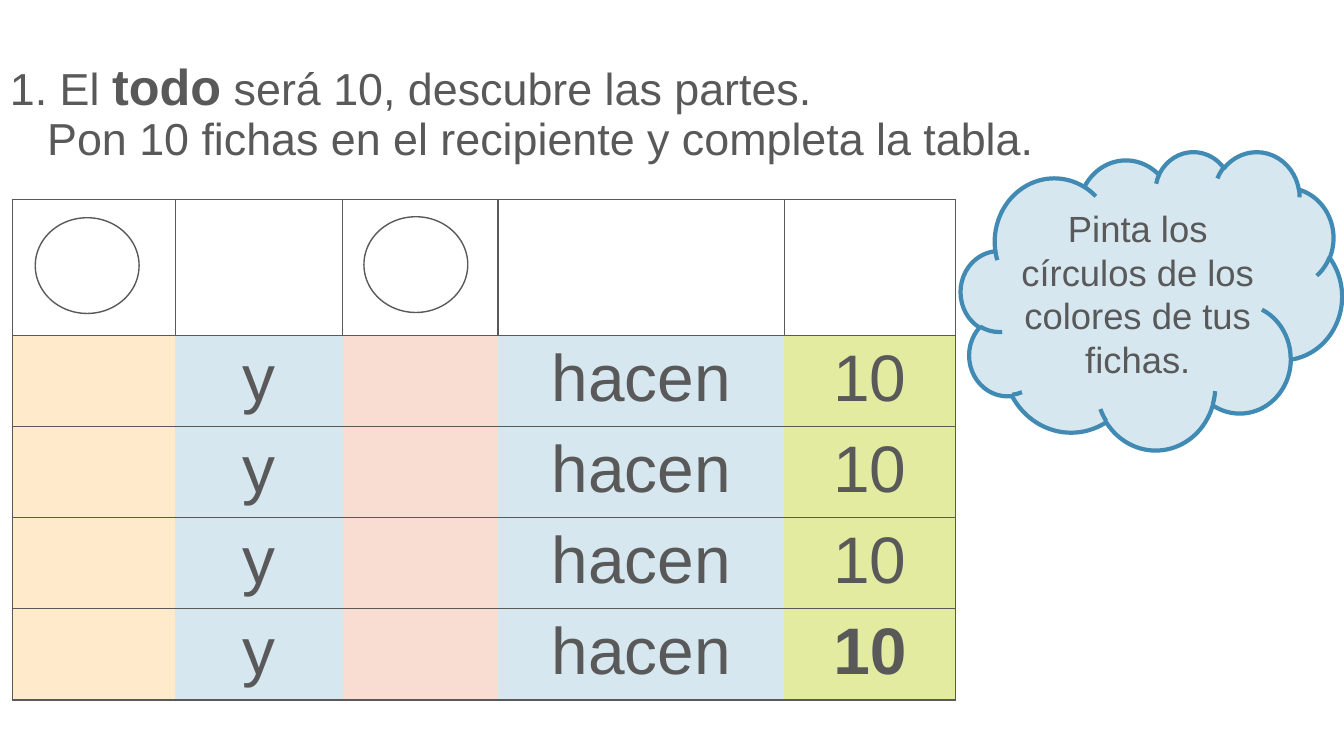
from dataclasses import dataclass

import pptx
import pptx.dml.color
import pptx.enum.shapes
import pptx.enum.text
import pptx.oxml
import pptx.oxml.ns
import pptx.util

Inches = pptx.util.Inches
Pt = pptx.util.Pt
RGBColor = pptx.dml.color.RGBColor
MSO_SHAPE = pptx.enum.shapes.MSO_SHAPE
CENTER = pptx.enum.text.PP_ALIGN.CENTER

GRAY = RGBColor(0x59, 0x59, 0x59)
WHITE = RGBColor(0xFF, 0xFF, 0xFF)
CREAM = RGBColor(0xFF, 0xEB, 0xCB)
PALE_BLUE = RGBColor(0xD6, 0xE7, 0xF0)
PINK = RGBColor(0xF9, 0xDC, 0xD2)
LIME = RGBColor(0xE2, 0xEB, 0xA0)
BLUE = RGBColor(0x41, 0x8A, 0xB3)

FONT = "Arial"
PLAIN_TABLE_STYLE = "{2D5ABB26-0587-4C30-8999-92F81FD0307C}"
HEADER_HEIGHT = 1.35
ROW_HEIGHT = 0.89
SUM_ROWS = 4


@dataclass
class Column:
    width: float
    word: str
    fill: RGBColor
    sides: str


@dataclass
class Figure:
    kind: int
    left: float
    top: float
    width: float
    height: float
    fill: RGBColor
    outline: RGBColor
    weight: float


COLUMNS = [
    Column(1.62, "", CREAM, "LTB"),
    Column(1.66, "y", PALE_BLUE, "TB"),
    Column(1.54, "", PINK, "TB"),
    Column(2.84, "hacen", PALE_BLUE, "TB"),
    Column(1.7, "10", LIME, "RTB"),
]
COUNTER_CIRCLES = [
    Figure(MSO_SHAPE.OVAL, left, top, 1.03, 0.95, WHITE, GRAY, 1)
    for left, top in ((0.35, 2.16), (3.61, 2.15))
]
# The cloud fits between the table and the right edge of the slide
HINT_CLOUD = Figure(MSO_SHAPE.CLOUD, 9.53, 1.5, 3.78, 2.96, PALE_BLUE, BLUE, 3)


def style_font(font, size: float) -> None:
    font.name = FONT
    font.size = Pt(size)
    font.color.rgb = GRAY


def draw_figure(slide, figure: Figure):
    shape = slide.shapes.add_shape(
        figure.kind, Inches(figure.left), Inches(figure.top),
        Inches(figure.width), Inches(figure.height))
    shape.shadow.inherit = False
    shape.fill.solid()
    shape.fill.fore_color.rgb = figure.fill
    shape.line.color.rgb = figure.outline
    shape.line.width = Pt(figure.weight)
    return shape


def paint_cell(cell, fill: RGBColor, sides: str) -> None:
    cell.fill.solid()
    cell.fill.fore_color.rgb = fill
    properties = cell._tc.get_or_add_tcPr()
    # Borders go before the fill, in the order left, right, top, bottom
    for position, side in enumerate(sides):
        properties.insert(position, pptx.oxml.parse_xml(
            f'<a:ln{side} {pptx.oxml.ns.nsdecls("a")} w="{Pt(1)}">'
            f'<a:solidFill><a:srgbClr val="{GRAY}"/></a:solidFill></a:ln{side}>'))


def draw_instructions(slide) -> None:
    box = slide.shapes.add_textbox(
        Inches(0), Inches(0.57), Inches(13.33), Inches(1.31))
    frame = box.text_frame
    frame.word_wrap = True
    goal = frame.paragraphs[0]
    for text, size, bold in (("1. El ", 32, False), ("todo", 36, True),
                             (" será 10, descubre las partes.", 32, False)):
        run = goal.add_run()
        run.text = text
        style_font(run.font, size)
        run.font.bold = bold
    task = frame.add_paragraph()
    task.text = "Pon 10 fichas en el recipiente y completa la tabla."
    task._p.get_or_add_pPr().set("marL", str(Inches(0.37)))
    style_font(task.font, 32)
    for paragraph in (goal, task):
        paragraph.line_spacing = 0.9


def draw_sums_table(slide) -> None:
    height = HEADER_HEIGHT + SUM_ROWS * ROW_HEIGHT
    frame = slide.shapes.add_table(
        SUM_ROWS + 1, len(COLUMNS), Inches(0.12), Inches(1.98),
        Inches(sum(column.width for column in COLUMNS)), Inches(height))
    table = frame.table
    table.first_row = False
    table.horz_banding = False
    table._tbl.tblPr.find(pptx.oxml.ns.qn("a:tableStyleId")).text = PLAIN_TABLE_STYLE
    for row_index, row in enumerate(table.rows):
        row.height = Inches(ROW_HEIGHT if row_index else HEADER_HEIGHT)

    for column_index, column in enumerate(COLUMNS):
        table.columns[column_index].width = Inches(column.width)
        paint_cell(table.cell(0, column_index), WHITE, "LRTB")
        for row_index in range(1, SUM_ROWS + 1):
            cell = table.cell(row_index, column_index)
            paint_cell(cell, column.fill, column.sides)
            if column.word:
                cell.margin_left = cell.margin_right = Inches(0.12)
                cell.margin_top = cell.margin_bottom = Inches(0.06)
                word = cell.text_frame.paragraphs[0]
                word.text = column.word
                word.alignment = CENTER
                style_font(word.font, 47)
                word.font.bold = column.word == "10" and row_index == SUM_ROWS


def draw_hint(slide) -> None:
    frame = draw_figure(slide, HINT_CLOUD).text_frame
    frame.word_wrap = True
    frame.vertical_anchor = pptx.enum.text.MSO_ANCHOR.MIDDLE
    frame.margin_left = frame.margin_right = 0
    hint = frame.paragraphs[0]
    hint.text = "Pinta los círculos de los colores de tus fichas."
    hint.alignment = CENTER
    style_font(hint.font, 26)


def main() -> None:
    presentation = pptx.Presentation()
    presentation.slide_width = Inches(13.33)
    presentation.slide_height = Inches(7.5)
    slide = presentation.slides.add_slide(presentation.slide_layouts[6])

    draw_instructions(slide)
    draw_sums_table(slide)
    for circle in COUNTER_CIRCLES:
        draw_figure(slide, circle)
    draw_hint(slide)

    presentation.save("out.pptx")


if __name__ == "__main__":
    main()
